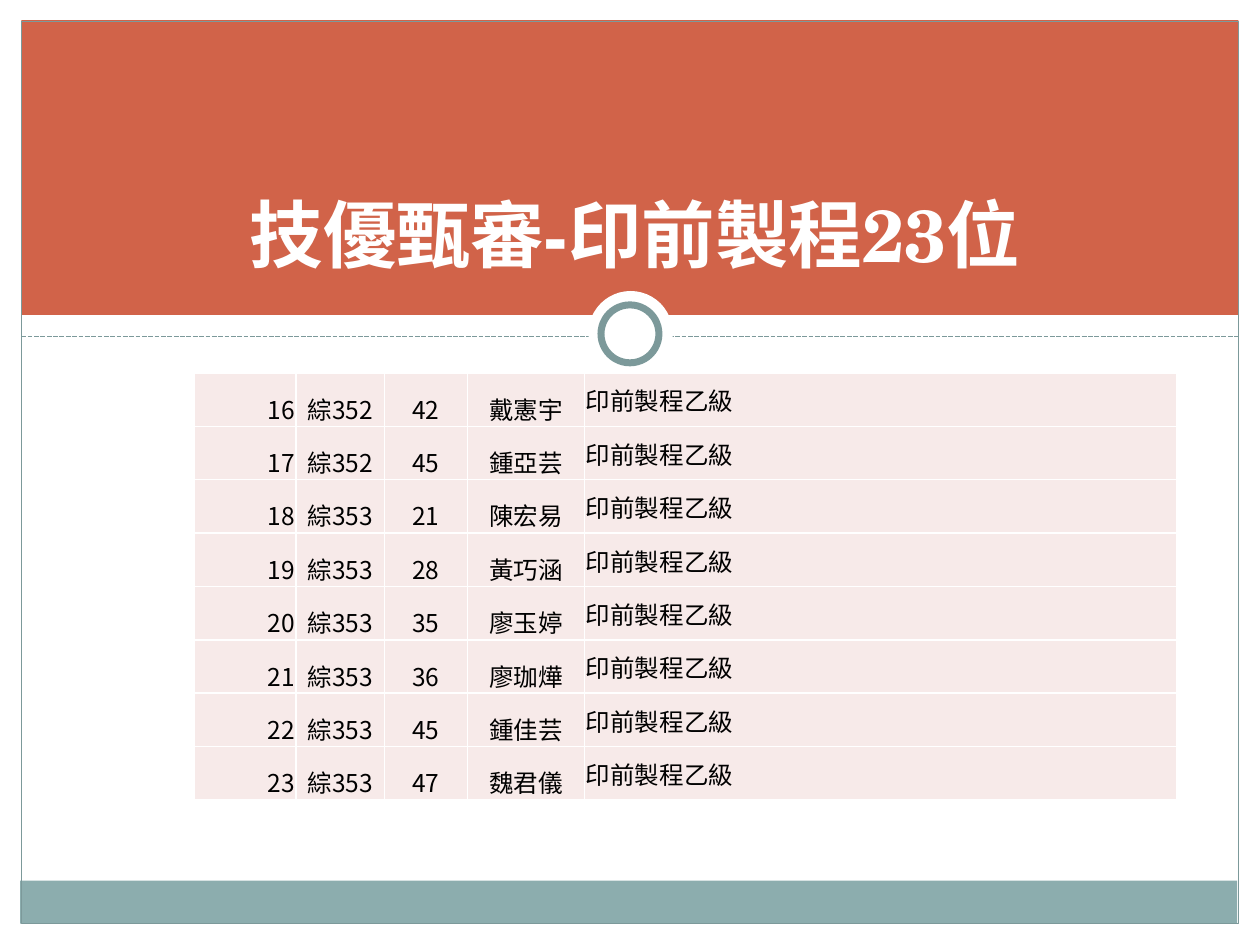
from lxml.etree import SubElement as Sub
from pptx import Presentation
from pptx.dml.color import RGBColor
from pptx.enum.dml import MSO_LINE as Dash
from pptx.enum.shapes import MSO_CONNECTOR as Conn, MSO_SHAPE as Shape
from pptx.enum.text import MSO_ANCHOR as Anchor, PP_ALIGN as Align
from pptx.oxml.ns import qn
from pptx.util import Inches, Pt

WHITE = RGBColor(0xFF, 0xFF, 0xFF)
BLACK = RGBColor(0, 0, 0)
RUST = RGBColor(0xD1, 0x63, 0x49)
TEAL = RGBColor(0x8C, 0xAD, 0xAE)
SLATE = RGBColor(0x7C, 0x99, 0x9A)
PINK = RGBColor(0xF7, 0xEA, 0xE9)
SANS = "Noto Sans CJK SC"
SERIF = "TeX Gyre Schola"

COLS = [0.81, 0.7, 0.66, 0.93, 4.7]
ALIGNS = [Align.RIGHT, Align.CENTER, Align.CENTER, Align.CENTER, Align.LEFT]
FIRST = 16
SKILL = "印前製程乙級"
PEOPLE = [
    ("綜352", "42", "戴憲宇"),
    ("綜352", "45", "鍾亞芸"),
    ("綜353", "21", "陳宏易"),
    ("綜353", "28", "黃巧涵"),
    ("綜353", "35", "廖玉婷"),
    ("綜353", "36", "廖珈燁"),
    ("綜353", "45", "鍾佳芸"),
    ("綜353", "47", "魏君儀"),
]


def add_box(slide, box, fill=None, line=None, width=1, kind=Shape.RECTANGLE):
    shape = slide.shapes.add_shape(kind, *map(Inches, box))
    shape.shadow.inherit = False
    if fill is None:
        shape.fill.background()
    else:
        shape.fill.solid()
        shape.fill.fore_color.rgb = fill
    if line is None:
        shape.line.fill.background()
    else:
        shape.line.color.rgb = line
        shape.line.width = Pt(width)


def add_rule(slide, left, right, y):
    rule = slide.shapes.add_connector(
        Conn.STRAIGHT, Inches(left), Inches(y), Inches(right), Inches(y))
    rule.line.color.rgb = SLATE
    rule.line.width = Pt(0.9)
    rule.line.dash_style = Dash.SQUARE_DOT
    Sub(rule._element.spPr, qn("a:effectLst"))


def add_run(para, text, size, color, font, bold=False):
    run = para.add_run()
    run.text = text
    run.font.size = Pt(size)
    run.font.bold = bold
    run.font.name = font
    run.font.color.rgb = color
    Sub(run._r.get_or_add_rPr(), qn("a:ea"), typeface=SANS)


def add_title(slide, text):
    box = slide.shapes.add_textbox(*map(Inches, (0.79, 0.58, 8.5, 1.67)))
    frame = box.text_frame
    frame.word_wrap = True
    frame.vertical_anchor = Anchor.BOTTOM
    para = frame.paragraphs[0]
    para.alignment = Align.CENTER
    add_run(para, text, 42, WHITE, SERIF, True)


def set_edges(cell):
    props = cell._tc.get_or_add_tcPr()
    for spot, side in enumerate(("lnL", "lnR", "lnT", "lnB")):
        edge = props.makeelement(qn("a:" + side), {"w": str(Pt(1))})
        fill = Sub(edge, qn("a:solidFill"))
        Sub(fill, qn("a:srgbClr"), val=str(WHITE))
        props.insert(spot, edge)


def fill_cell(cell, text, align):
    cell.fill.solid()
    cell.fill.fore_color.rgb = PINK
    cell.margin_left = cell.margin_right = cell.margin_top = Inches(0.01)
    cell.margin_bottom = 0
    cell.vertical_anchor = Anchor.MIDDLE if align == Align.LEFT else Anchor.BOTTOM
    para = cell.text_frame.paragraphs[0]
    para.alignment = align
    add_run(para, text, 14, BLACK, SANS)
    set_edges(cell)


def add_roster(slide):
    frame = slide.shapes.add_table(
        len(PEOPLE), len(COLS), *map(Inches, (1.54, 2.96, 7.8, 3.39)))
    table = frame.table
    table.first_row = table.horz_banding = False
    for col, width in zip(table.columns, COLS):
        col.width = Inches(width)
    for i, person in enumerate(PEOPLE):
        texts = (str(FIRST + i), *person, SKILL)
        for j, (text, align) in enumerate(zip(texts, ALIGNS)):
            fill_cell(table.cell(i, j), text, align)


def add_frame(slide):
    for box, fill in (
        ((0, 7.33, 10, 0.17), WHITE),
        ((0, 0, 10, 0.17), WHITE),
        ((9.83, 0, 0.17, 7.5), WHITE),
        ((0.17, 2.5, 9.66, 0.33), WHITE),
        ((0.17, 0.16, 9.66, 2.34), RUST),
        ((0.16, 6.99, 9.66, 0.34), TEAL),
    ):
        add_box(slide, box, fill)
    add_box(slide, (0.17, 0.17, 9.66, 7.16), line=SLATE, width=0.75)
    add_rule(slide, 0.17, 9.83, 2.67)
    add_box(slide, (4.67, 2.31, 0.67, 0.67), WHITE, kind=Shape.OVAL)
    add_box(slide, (4.77, 2.42, 0.46, 0.46), WHITE, SLATE, 4, Shape.OVAL)


def main():
    deck = Presentation()
    deck.slide_width = Inches(10)
    deck.slide_height = Inches(7.5)
    slide = deck.slides.add_slide(deck.slide_layouts[6])
    add_frame(slide)
    add_roster(slide)
    add_title(slide, "技優甄審-印前製程23位")
    deck.save("out.pptx")


if __name__ == "__main__":
    main()
